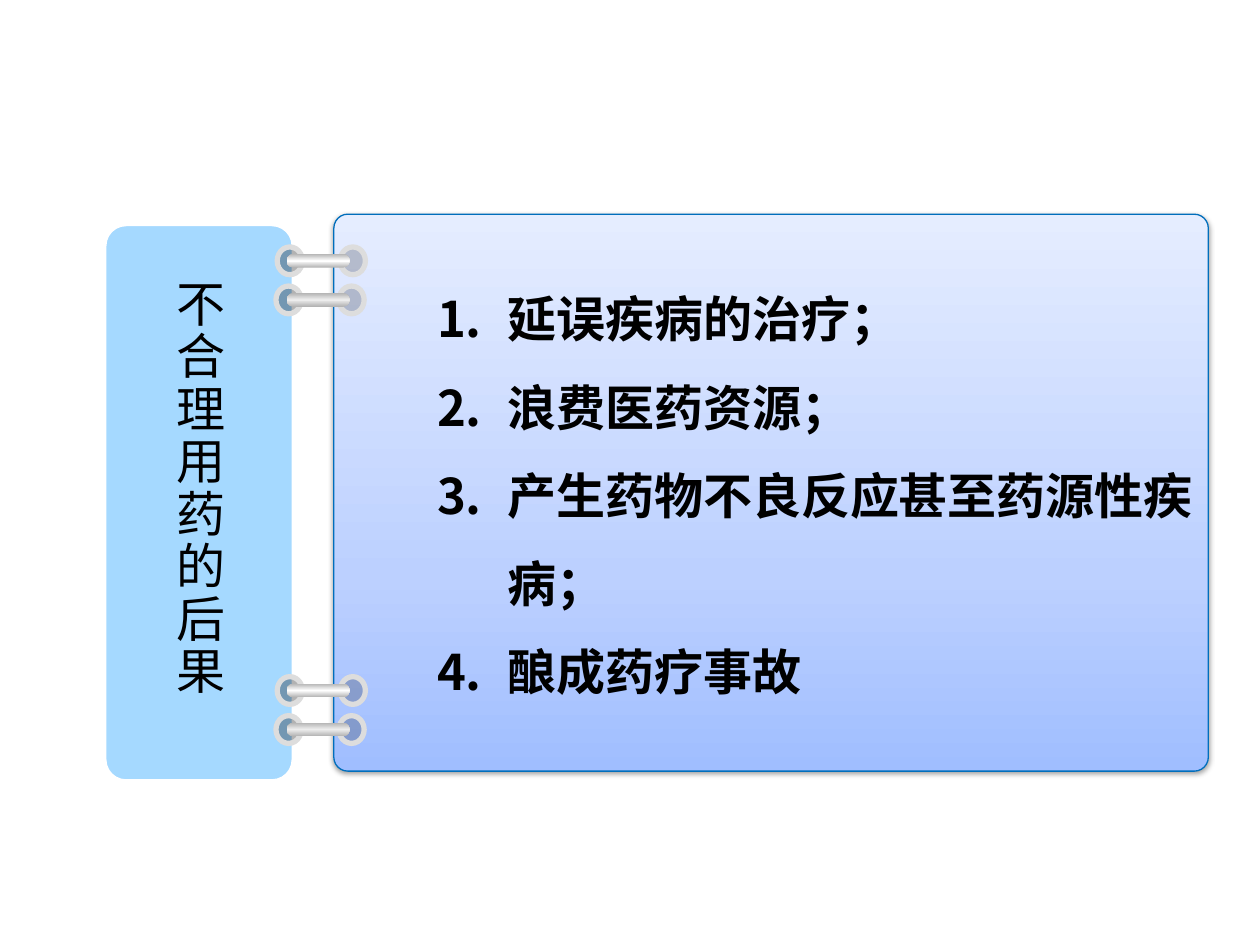
from lxml import etree
from pptx import Presentation
from pptx.dml.color import RGBColor
from pptx.enum.shapes import MSO_SHAPE
from pptx.enum.text import MSO_AUTO_SIZE, PP_ALIGN
from pptx.oxml import parse_xml
from pptx.oxml.ns import qn
from pptx.util import Inches, Pt

ROUND, OVAL = MSO_SHAPE.ROUNDED_RECTANGLE, MSO_SHAPE.OVAL
GROW, JUSTIFY = MSO_AUTO_SIZE.SHAPE_TO_FIT_TEXT, PP_ALIGN.JUSTIFY
NS = 'xmlns:a="http://schemas.openxmlformats.org/drawingml/2006/main"'
COLORS = {
    "tab": "80CAFF", "white": "FFFFFF", "black": "000000", "edge": "006EBC",
    "card_low": "A0BEFF", "card_mid": "BCD0FF", "card_top": "E5EDFF",
    "eyelet": "DDDDDD", "steel": "B2B2B2", "shine": "EDEDED",
}
FONT = {"name": "Arial", "size": Pt(28)}


def add_shape(kind, box, fill, line=None, width=0, adj=None, rotation=0):
    """Fill is (colour, opacity %) or (angle, [(position %, colour), ...])."""
    sp = s.shapes.add_shape(kind, *map(Inches, box))
    sp.shadow.inherit = False
    sp.rotation = rotation
    if adj is not None:
        sp.adjustments[0] = adj
    if isinstance(fill[0], str):
        sp.fill.solid()
        sp.fill.fore_color.rgb = RGBColor.from_string(COLORS[fill[0]])
        color = sp.fill._xPr.find(qn("a:solidFill"))[0]
        etree.SubElement(color, qn("a:alpha"), val=str(fill[1] * 1000))
    else:
        angle, stops = fill
        gs = "".join(f'<a:gs pos="{pos * 1000}"><a:srgbClr val="{COLORS[c]}"/></a:gs>'
                     for pos, c in stops)
        grad = parse_xml(f'<a:gradFill {NS} rotWithShape="0"><a:gsLst>{gs}</a:gsLst>'
                         f'<a:lin ang="{angle * 60000}" scaled="0"/></a:gradFill>')
        sp._element.spPr.find(qn("a:prstGeom")).addnext(grad)
    if line:
        sp.line.color.rgb = RGBColor.from_string(COLORS[line])
        sp.line.width = Pt(width)
    else:
        sp.line.fill.background()
    return sp


def add_text(box, lines, spacing, bold=None):
    tb = s.shapes.add_textbox(*map(Inches, box))
    tf = tb.text_frame
    tf.word_wrap = True
    tf.auto_size = GROW
    for i, text in enumerate(lines):
        p = tf.paragraphs[0] if i == 0 else tf.add_paragraph()
        p.line_spacing = spacing
        r = p.add_run()
        r.text = text
        for name, value in {**FONT, "bold": bold}.items():
            setattr(r.font, name, value)
        r.font.color.rgb = RGBColor.from_string(COLORS["black"])
    return tf


prs = Presentation()
prs.slide_width, prs.slide_height = Inches(10), Inches(7.5)
s = prs.slides.add_slide(prs.slide_layouts[6])

# Side tab and main card
add_shape(ROUND, (0.83, 1.78, 1.5, 4.42), ("tab", 70), "white", 2.25, adj=0.114)
card = add_shape(ROUND, (2.65, 1.7, 6.94, 4.42),
                 (270, [(0, "card_low"), (35, "card_mid"), (100, "card_top")]),
                 "edge", 0.75, adj=0.025)
card._element.spPr.find(qn("a:effectLst")).append(parse_xml(
    f'<a:outerShdw {NS} blurRad="{Pt(3.1)}" dist="{Pt(1.6)}" dir="5400000" rotWithShape="0">'
    f'<a:srgbClr val="{COLORS["black"]}"><a:alpha val="38000"/></a:srgbClr></a:outerShdw>'))

# Binder rings: two pairs, the lower ring of each pair first
for pair_top in (1.97, 5.38):
    for dx, dy, middle in ((0, 0.31, "shine"), (0.01, 0, "white")):
        top = pair_top + dy
        for left, opacity in ((2.68, 20), (2.18, 30)):
            add_shape(OVAL, (left + dx, top, 0.22, 0.2), ("black", opacity),
                      "eyelet", 3, rotation=90)
        add_shape(ROUND, (2.47, top - 0.15, 0.11, 0.5),
                  (90, [(0, "steel"), (50, middle), (100, "steel")]),
                  adj=0.5, rotation=90)

# Title on the tab, numbered list on the card
title = add_text((1.3, 2.17, 0.61, 3.47), ["不合理用药的后果"], Pt(30))
title.paragraphs[0].alignment = JUSTIFY

consequences = ["延误疾病的治疗；", "浪费医药资源；", "产生药物不良反应甚至药源性疾病；", "酿成药疗事故"]
body = add_text((2.87, 2.01, 6.72, 4.04), consequences, 1.5, bold=True)
for p in body.paragraphs:
    p.level = 1
    pPr = p._p.get_or_add_pPr()
    pPr.set("marL", str(Inches(1.06)))
    pPr.set("indent", str(Inches(-0.56)))
    etree.SubElement(pPr, qn("a:buFont"), typeface="+mj-lt")
    etree.SubElement(pPr, qn("a:buAutoNum"), type="arabicPeriod")

prs.save("out.pptx")
